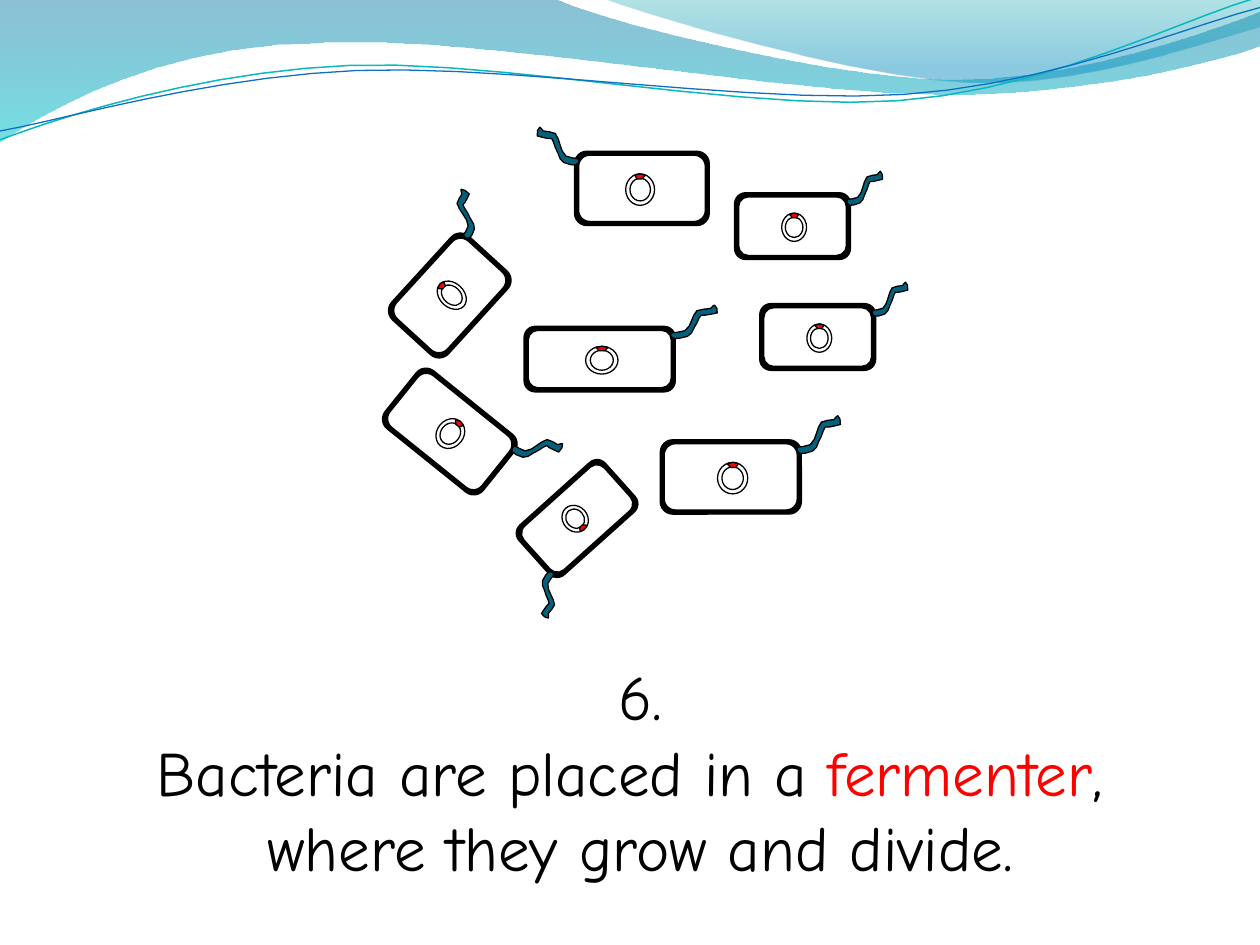
import math

import pptx
import pptx.dml.color
import pptx.enum.shapes
import pptx.enum.text
import pptx.oxml
import pptx.oxml.ns
import pptx.util

RGBColor = pptx.dml.color.RGBColor
BLACK = RGBColor(0x00, 0x00, 0x00)
WHITE = RGBColor(0xFF, 0xFF, 0xFF)
RED = RGBColor(0xFF, 0x00, 0x00)
DEEP_TEAL = RGBColor(0x04, 0x61, 0x7B)
WAVE_BLUE = RGBColor(0x00, 0x74, 0xA1)
WAVE_CYAN = RGBColor(0x00, 0xC6, 0xCF)
CREST_GREEN = RGBColor(0x00, 0xA1, 0xA9)
CREST_BLUE = RGBColor(0x00, 0x8B, 0xBF)
STRAND_CYAN = RGBColor(0x0A, 0xB8, 0xBF)
STRAND_BLUE = RGBColor(0x0F, 0x6F, 0xC6)

# The page is a grid of square cells, a tenth of an inch wide.
COLUMNS, ROWS = 100, 75
CELL = pptx.util.Inches(0.1)

# An outline is a start point, then lines (x, y) and Bezier curves (six numbers).
WAVE = [(0, -0.1), (44, -0.1), (47.6, 1.7, 66.4, 6.3, 75.8, 6.3),
        (85.3, 6.3, 95.8, 2.6, 100, 0.9), (100.1, 3.6),
        (98.3, 4.4, 87, 7.6, 74.6, 7.5), (62.2, 7.5, 38.2, 2.8, 25.7, 3.4),
        (12.9, 3.5, 4.6, 8.3, -0.1, 11.3)]
CREST = [(47.9, -0.1), (50.9, 1.1, 68.2, 6.2, 76.9, 6.5),
         (85.6, 6.9, 96.1, 3.2, 100, 2.1), (100, 0)]
UPPER_STRAND = [(0, 11.1), (4.8, 9.3, 15.8, 5.7, 27.7, 5.2),
                (39.5, 4.7, 59.3, 8.9, 71.3, 8), (83.3, 7.1, 93.8, 1.5, 99.8, -0.2)]
LOWER_STRAND = [(0, 10.4), (4.7, 9.6, 16.4, 6.1, 28.3, 5.6),
                (40.3, 5.1, 59.7, 8.3, 71.7, 7.5), (83.6, 6.7, 94.1, 2.1, 100, 0.6)]
WAVE_STEPS = 10

# Cell parts are drawn against a body of 112 by 59 units, from its top left corner.
BODY_UNITS = (112, 59)
PLASMID_CENTRE = (57.5, 30.5)
PLASMID_RINGS = [(24, 25), (17, 18)]
GENE = [(56, 22), (60, 22), (62, 19), (58, 18), (53, 19)]
FLAGELLUM = [(109, 6), (110, 5, 117, 6, 119, 4), (122, 2, 123, -2, 124, -5),
             (126, -8, 125, -12, 128, -14), (130, -16, 136, -15, 138, -16),
             (140, -17, 140, -20, 141, -19), (142, -19, 144, -14, 143, -12),
             (142, -11, 136, -11, 134, -10), (131, -10),
             (130, -9, 129, -6, 128, -3), (126, 0, 125, 4, 124, 6),
             (121, 9), (118, 10, 112, 12, 111, 11), (109, 11, 107, 7, 109, 6)]
FLAGELLUM_STEPS = 2

# Centre, size, rotation in degrees, mirrored
BACTERIA = [
    ((47.6, 28.5), (12, 5.2), 0, False),
    ((35.7, 34.25), (10, 5.9), 38.8, False),
    ((58, 37.85), (11.2, 5.9), 0, False),
    ((50.95, 14.95), (10.7, 5.9), 0, True),
    ((35.7, 23.45), (9, 6.1), 312.4, False),
    ((62.9, 17.95), (9.2, 5.3), 0, False),
    ((64.9, 26.75), (9.2, 5.3), 0, False),
    ((45.8, 41.15), (9.2, 5.3), 138.1, False),
]


def flatten(outline, steps):
    """Turn an outline of lines and Bezier curves into a list of points."""
    points = [outline[0]]
    for segment in outline[1:]:
        if len(segment) == 2:
            points.append(segment)
            continue
        knots = [points[-1], segment[0:2], segment[2:4], segment[4:6]]
        for step in range(1, steps + 1):
            t = step / steps
            weights = [math.comb(3, i) * t ** i * (1 - t) ** (3 - i) for i in range(4)]
            points.append(tuple(sum(w * knot[axis] for w, knot in zip(weights, knots))
                                for axis in (0, 1)))
    return points


class SlideArtist:
    font_name = "Comic Neue"
    font_size = pptx.util.Pt(36)
    outline_width = 0.75

    def __init__(self, page):
        self.page = page

    def style(self, shape, fill=None, line=None, width=outline_width):
        shape.shadow.inherit = False
        for part, colour in ((shape.fill, fill), (shape.line.fill, line)):
            if colour is None:
                part.background()
            else:
                part.solid()
                part.fore_color.rgb = colour
        if line is not None:
            shape.line.width = pptx.util.Pt(width)

    def preset(self, kind, centre, size, rotation, fill):
        corner = [middle - length / 2 for middle, length in zip(centre, size)]
        shape = self.page.shapes.add_shape(kind, *[int(v * CELL) for v in (*corner, *size)])
        shape.rotation = rotation
        self.style(shape, fill, BLACK)
        return shape

    def freeform(self, points, closed=True, **look):
        scaled = [(round(x * CELL), round(y * CELL)) for x, y in points]
        builder = self.page.shapes.build_freeform(*scaled[0])
        builder.add_line_segments(scaled[1:], close=closed)
        shape = builder.convert_to_shape()
        self.style(shape, **look)
        return shape

    def gradient_wave(self, outline, stops):
        """Draw a band shaded downwards; a stop is (position, colour, opacity in percent)."""
        shape = self.freeform(flatten(outline, WAVE_STEPS))
        shape.fill.gradient()
        shape.fill.gradient_angle = 270
        for stop, (position, colour, opacity) in zip(shape.fill.gradient_stops, stops):
            stop.position = position
            stop.color.rgb = colour
        tags = shape.element.spPr.iter(pptx.oxml.ns.qn("a:srgbClr"))
        for tag, (position, colour, opacity) in zip(list(tags), stops):
            alpha = pptx.oxml.parse_xml(
                f'<a:alpha {pptx.oxml.ns.nsdecls("a")} val="{opacity * 1000}"/>')
            tag.append(alpha)

    def strand(self, outline, colour, width):
        self.freeform(flatten(outline, WAVE_STEPS), closed=False, line=colour, width=width)

    def bacterium(self, centre, size, rotation, mirrored):
        turn = math.radians(rotation)
        scale = [length / units for length, units in zip(size, BODY_UNITS)]

        def place(point):
            x, y = [(value - units / 2) * factor
                    for value, units, factor in zip(point, BODY_UNITS, scale)]
            x = -x if mirrored else x
            return (centre[0] + x * math.cos(turn) - y * math.sin(turn),
                    centre[1] + x * math.sin(turn) + y * math.cos(turn))

        kinds = pptx.enum.shapes.MSO_SHAPE
        for inset, fill in ((0, BLACK), (0.65, WHITE)):
            wall = self.preset(kinds.ROUNDED_RECTANGLE, centre,
                               [length - inset for length in size], rotation, fill)
            wall.adjustments[0] = 0.167
        for ring in PLASMID_RINGS:
            ring_size = [units * factor for units, factor in zip(ring, scale)]
            self.preset(kinds.OVAL, place(PLASMID_CENTRE), ring_size, rotation, WHITE)
        for outline, fill in ((GENE, RED), (FLAGELLUM, DEEP_TEAL)):
            points = [place(point) for point in flatten(outline, FLAGELLUM_STEPS)]
            self.freeform(points, fill=fill, line=BLACK)

    def caption(self, left, top, width, height, lines):
        """Write centred lines, each a list of (text, colour)."""
        box = self.page.shapes.add_textbox(*[int(v * CELL) for v in (left, top, width, height)])
        frame = box.text_frame
        frame.word_wrap = True
        frame.auto_size = pptx.enum.text.MSO_AUTO_SIZE.SHAPE_TO_FIT_TEXT
        for number, line in enumerate(lines):
            para = frame.add_paragraph() if number else frame.paragraphs[0]
            para.alignment = pptx.enum.text.PP_ALIGN.CENTER
            for text, colour in line:
                span = para.add_run()
                span.text = text
                span.font.name = self.font_name
                span.font.size = self.font_size
                span.font.color.rgb = colour


def main():
    deck = pptx.Presentation()
    deck.slide_width = COLUMNS * CELL
    deck.slide_height = ROWS * CELL
    artist = SlideArtist(deck.slides.add_slide(deck.slide_layouts.get_by_name("Blank")))

    artist.gradient_wave(WAVE, [(0, WAVE_BLUE, 45), (1, WAVE_CYAN, 55)])
    artist.gradient_wave(CREST, [(0, CREST_GREEN, 30), (0.8, CREST_BLUE, 45)])
    artist.strand(UPPER_STRAND, STRAND_CYAN, 0.85)
    artist.strand(LOWER_STRAND, STRAND_BLUE, 0.75)
    for bacterium in BACTERIA:
        artist.bacterium(*bacterium)
    artist.caption(5.1, 51.7, 91.4, 19, [
        [("6.", BLACK)],
        [("Bacteria are placed in a ", BLACK), ("fermenter", RED), (", ", BLACK)],
        [("where they grow and divide.", BLACK)],
    ])
    deck.save("out.pptx")


if __name__ == "__main__":
    main()
